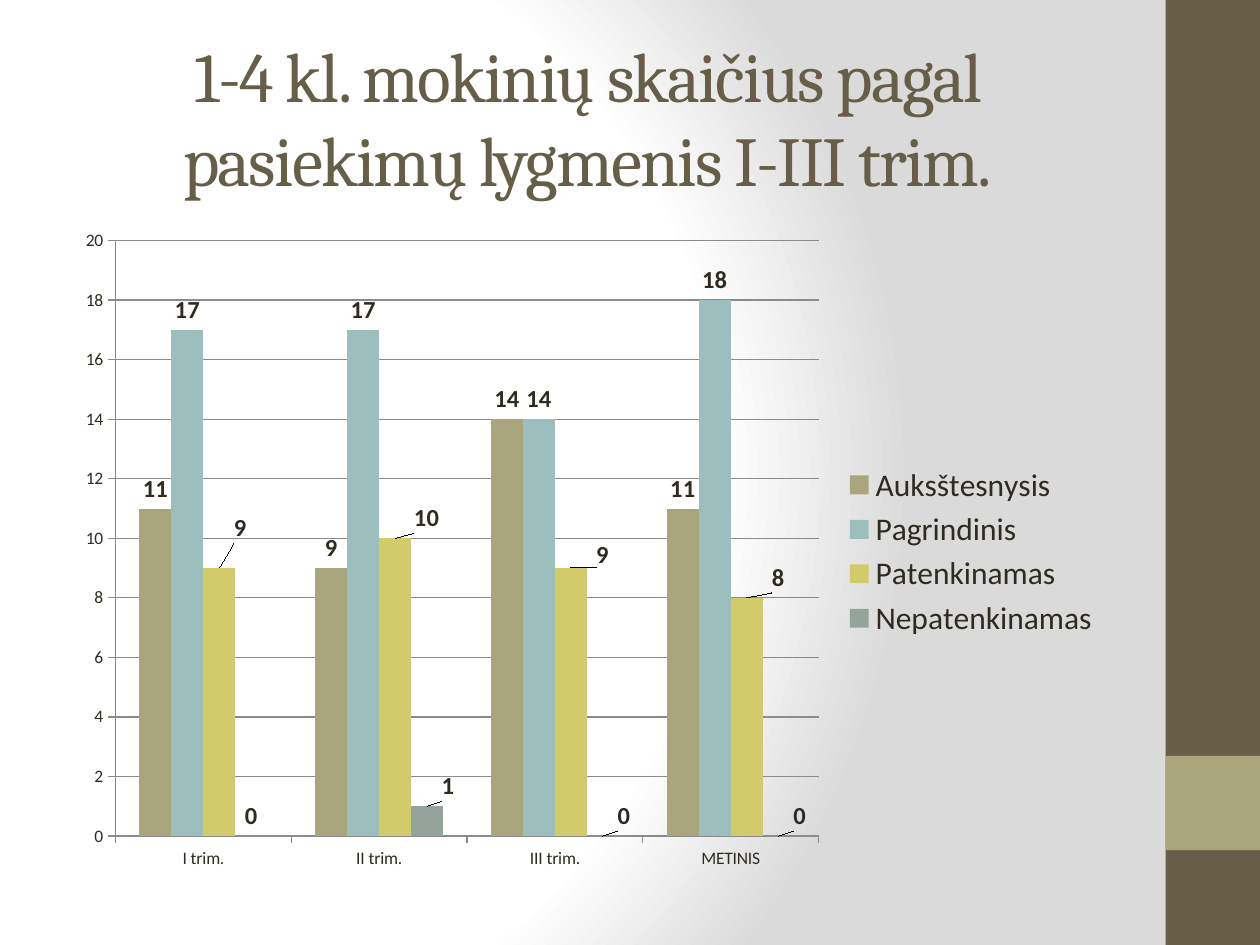
"""Build a slide with a column chart of pupils by achievement level."""
from lxml import etree
from pptx import Presentation
from pptx import util as u
from pptx.chart.data import CategoryChartData
from pptx.dml.color import RGBColor
from pptx.enum import chart as kinds, shapes, text
from pptx.oxml import parse_xml
from pptx.oxml.ns import nsdecls


def color(value):
    return RGBColor.from_string(value)


def layout_xml(inner="", **places):
    marks = "".join(f'<c:{name} val="{value}"/>' for name, value in places.items())
    return parse_xml(f'<c:layout {nsdecls("c")}><c:manualLayout>{inner}{marks}</c:manualLayout></c:layout>')


deck = Presentation()
deck.slide_width, deck.slide_height = u.Cm(25.4), u.Cm(19.05)
page = deck.slides.add_slide(deck.slide_layouts[5])

page.background.fill.gradient()
gradient = page.background._cSld.xpath(".//a:gradFill")[0]
stops = "".join(
    f'<a:gs pos="{place * 1000}"><a:srgbClr val="{shade}"/></a:gs>'
    for place, shade in ((0, "FFFFFF"), (75, "FFFFFF"), (100, "DADADA"))
)
radial = parse_xml(
    f'<a:gradFill {nsdecls("a")} rotWithShape="1"><a:gsLst>{stops}</a:gsLst><a:path path="circle">'
    '<a:fillToRect l="20000" t="50000" r="100000" b="50000"/></a:path></a:gradFill>'
)
gradient.getparent().replace(gradient, radial)

for top, height, shade in ((0, 19.05, "675E47"), (15.24, 1.9, "A9A57C")):
    band = page.shapes.add_shape(
        shapes.MSO_SHAPE.RECTANGLE, u.Cm(23.5), u.Cm(top), u.Cm(1.9), u.Cm(height))
    band.shadow.inherit = False
    band.fill.solid()
    band.fill.fore_color.rgb = color(shade)
    band.line.fill.background()

title = page.shapes.title
title.left, title.top, title.width, title.height = map(u.Cm, (1.27, 0.76, 21.16, 3.18))
title.text_frame.vertical_anchor = text.MSO_ANCHOR.MIDDLE
para = title.text_frame.paragraphs[0]
para.alignment = text.PP_ALIGN.CENTER
span = para.add_run()
span.text = "1-4 kl. mokinių skaičius pagal pasiekimų lygmenis I-III trim."
for name, value in {"size": u.Pt(40), "name": "Cambria"}.items():
    setattr(span.font, name, value)
span.font.color.rgb = color("675E47")
span.font._element.set("spc", "-100")

levels = (
    ("Auksštesnysis", (11, 9, 14, 11), "A9A57C", {}),
    ("Pagrindinis", (17, 17, 14, 18), "9CBEBD", {}),
    ("Patenkinamas", (9, 10, 9, 8), "D2CB6C",
     {0: (0.02, -0.03), 1: (0.03, 0), 2: (0.03, 0.01), 3: (0.03, 0)}),
    ("Nepatenkinamas", (0, 1, 0, 0), "95A39D",
     {1: (0.02, 0), 2: (0.02, 0), 3: (0.02, 0)}),
)
data = CategoryChartData()
data.categories = ["I trim.", "II trim.", "III trim.", "METINIS"]
for name, values, shade, shifts in levels:
    data.add_series(name, values)
chart = page.shapes.add_chart(
    kinds.XL_CHART_TYPE.COLUMN_CLUSTERED,
    u.Cm(1.27), u.Cm(4.45), u.Cm(21.16), u.Cm(13.34), data).chart
chart.has_title = False
chart.font.size, chart.font.name = u.Pt(10), "Calibri"
chart.font.color.rgb = color("2F2B20")

chart.has_legend = True
legend = chart.legend
legend.position = kinds.XL_LEGEND_POSITION.RIGHT
legend.include_in_layout = False
legend.font.size = u.Pt(18)
legend.font.name = "Calibri"
legend.font.color.rgb = color("2F2B20")

scale = {"minimum_scale": 0, "maximum_scale": 20, "major_unit": 2, "has_major_gridlines": True}
for name, value in scale.items():
    setattr(chart.value_axis, name, value)
for axis in (chart.category_axis, chart.value_axis):
    axis.major_tick_mark = kinds.XL_TICK_MARK.OUTSIDE
    axis.format.line.color.rgb = color("8B8B8B")
chart.value_axis.major_gridlines.format.line.color.rgb = color("8B8B8B")

area = chart._chartSpace.xpath(".//c:plotArea")[0]
for old in area.xpath("./c:layout"):
    area.remove(old)
area.insert(0, layout_xml(
    '<c:layoutTarget val="inner"/>', xMode="edge", yMode="edge", x=0.05, y=0.03, w=0.67, h=0.9))

plot = chart.plots[0]
plot.vary_by_categories = False
plot.gap_width, plot.overlap = 150, 0
label_font = {"size": u.Pt(14), "bold": True, "name": "Calibri"}
for series, (name, values, shade, shifts) in zip(plot.series, levels):
    series.format.fill.solid()
    series.format.fill.fore_color.rgb = color(shade)
    series.invert_if_negative = False
    labels = series.data_labels
    labels.show_value = True
    moved = [series.points[index].data_label for index in shifts]
    for label in (labels, *moved):
        label.position = kinds.XL_LABEL_POSITION.OUTSIDE_END
        for key, value in label_font.items():
            setattr(label.font, key, value)
        label.font.color.rgb = color("2F2B20")
    for index, (across, down) in shifts.items():
        entry = labels._element.xpath(f'./c:dLbl[c:idx/@val="{index}"]')[0]
        entry.insert(1, layout_xml(x=across, y=down))

deck.save("out.pptx")
